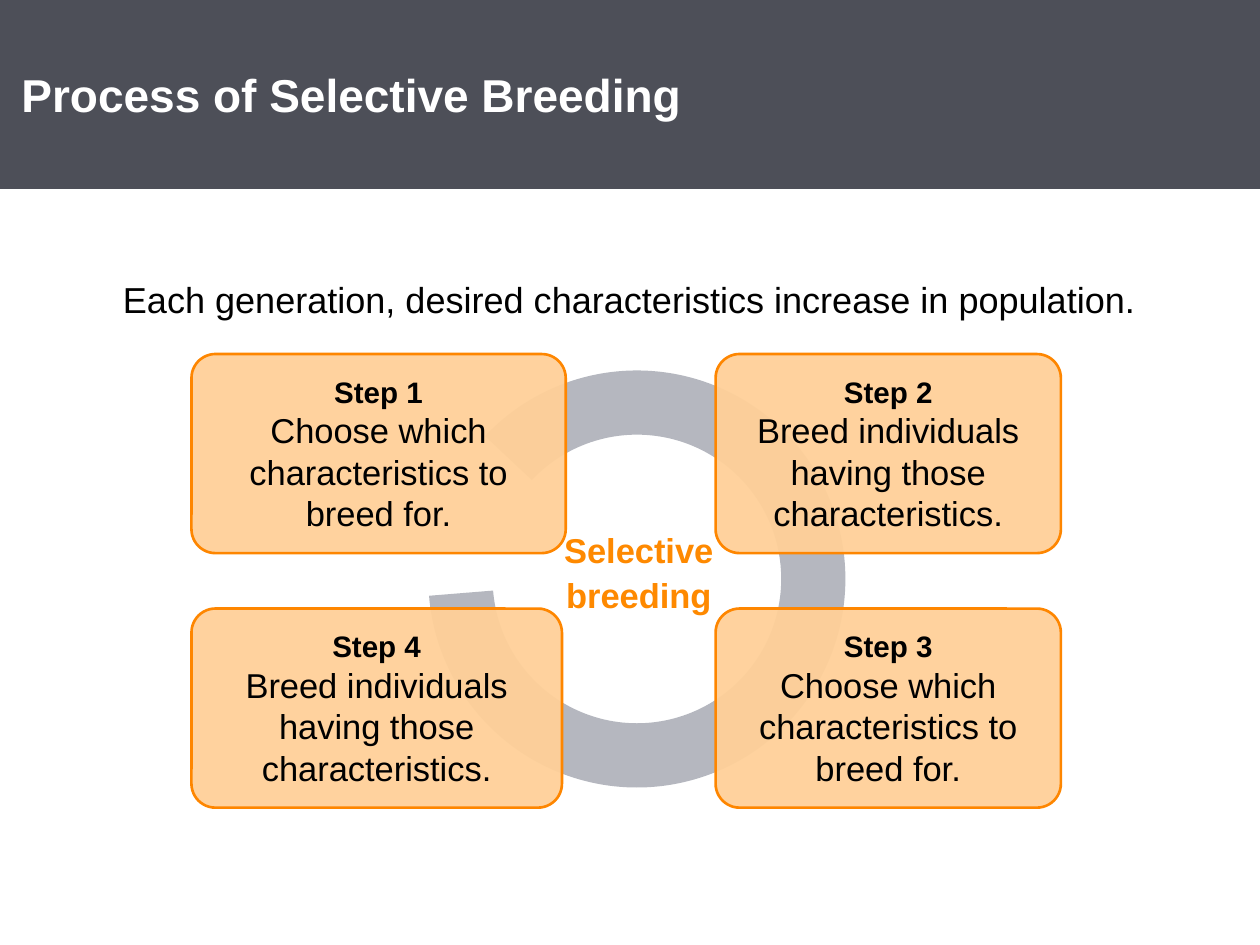
import pptx
import pptx.dml.color
import pptx.enum.shapes
import pptx.enum.text
import pptx.oxml
import pptx.oxml.ns
import pptx.util

Inches = pptx.util.Inches
Align = pptx.enum.text.PP_ALIGN
Anchor = pptx.enum.text.MSO_ANCHOR
Preset = pptx.enum.shapes.MSO_SHAPE

# Content
TITLE = "Process of Selective Breeding"
SUMMARY = "Each generation, desired characteristics increase in population."
CENTER_LINES = ["Selective", "breeding"]
CHOOSE = "Choose which characteristics to breed for."
BREED = "Breed individuals having those characteristics."
STEPS = [  # heading, text, column, row, width
    ("Step 1", CHOOSE, 0, 0, 2.97),
    ("Step 4", BREED, 0, 1, 2.94),
    ("Step 2", BREED, 1, 0, 2.74),
    ("Step 3", CHOOSE, 1, 1, 2.74),
]
COLUMN_LEFTS = [1.52, 5.68]
ROW_TOPS = [2.81, 4.83]
STEP_HEIGHT = 1.58

THEME = {
    "font": "Arial",
    "banner": "4D4F58", "white": "FFFFFF", "text": "000000",
    "ring": "B5B7BF", "step": "FFD099", "outline": "FE8600", "accent": "FE8900",
    "title_size": 26.3, "summary_size": 20.6, "heading_size": 16.9, "body_size": 19.7,
}


def color(name):
    return pptx.dml.color.RGBColor.from_string(THEME[name])


def box(left, top, width, height):
    return [Inches(value) for value in (left, top, width, height)]


def set_frame(frame, anchor, horizontal, vertical):
    frame.word_wrap = True
    frame.auto_size = pptx.enum.text.MSO_AUTO_SIZE.NONE
    frame.vertical_anchor = anchor
    frame.margin_left = frame.margin_right = Inches(horizontal)
    frame.margin_top = frame.margin_bottom = Inches(vertical)


def style(paragraph, size, color_name, bold=False, alignment=Align.CENTER):
    paragraph.alignment = alignment
    paragraph.font.name = THEME["font"]
    paragraph.font.size = pptx.util.Pt(THEME[size])
    paragraph.font.bold = bold
    paragraph.font.color.rgb = color(color_name)


def add_filled_shape(slide, preset, bounds, fill):
    shape = slide.shapes.add_shape(preset, *bounds)
    shape.shadow.inherit = False
    shape.fill.solid()
    shape.fill.fore_color.rgb = color(fill)
    shape.line.fill.background()
    return shape


def add_step(slide, heading, text, column, row, width):
    bounds = box(COLUMN_LEFTS[column], ROW_TOPS[row], width, STEP_HEIGHT)
    shape = add_filled_shape(slide, Preset.ROUNDED_RECTANGLE, bounds, "step")
    shape.adjustments[0] = 0.12
    shape.line.color.rgb = color("outline")
    shape.line.width = pptx.util.Pt(1.5)
    # Slight transparency lets the ring show through
    fill_color = shape.fill._xPr.find(".//" + pptx.oxml.ns.qn("a:srgbClr"))
    alpha = pptx.oxml.parse_xml(f'<a:alpha {pptx.oxml.ns.nsdecls("a")} val="95000"/>')
    fill_color.append(alpha)
    frame = shape.text_frame
    set_frame(frame, Anchor.MIDDLE, 0.19, 0.09)
    frame.text = f"{heading}\n{text}"
    style(frame.paragraphs[0], "heading_size", "text", bold=True)
    style(frame.paragraphs[1], "body_size", "text")


def main():
    presentation = pptx.Presentation()
    presentation.slide_width = Inches(10)
    presentation.slide_height = Inches(7.5)
    slide = presentation.slides.add_slide(presentation.slide_layouts[5])

    # Title banner
    title = slide.shapes.title
    title.left, title.top, title.width, title.height = box(0, 0, 10, 1.5)
    title.fill.solid()
    title.fill.fore_color.rgb = color("banner")
    set_frame(title.text_frame, Anchor.MIDDLE, 0.17, 0.07)
    title.text_frame.text = TITLE
    style(title.text_frame.paragraphs[0], "title_size", "white", True, Align.LEFT)

    # Summary line
    summary = slide.shapes.add_textbox(*box(0, 2.06, 10, 0.73)).text_frame
    set_frame(summary, Anchor.TOP, 0.18, 0.1)
    summary.text = SUMMARY
    style(summary.paragraphs[0], "summary_size", "text")
    summary.paragraphs[0].line_spacing = 1.13

    # Cycle ring: start angle, end angle, thickness
    ring = add_filled_shape(slide, Preset.BLOCK_ARC, box(3.4, 2.94, 3.31, 3.31), "ring")
    for index, value in enumerate((133.95, 105.23, 0.154)):
        ring.adjustments[index] = value

    # Steps around the ring
    for step in STEPS:
        add_step(slide, *step)

    # Label in the middle of the ring
    label = slide.shapes.add_textbox(*box(4.01, 4.15, 2.12, 0.79)).text_frame
    set_frame(label, Anchor.TOP, 0.1, 0.05)
    label.text = "\n".join(CENTER_LINES)
    for paragraph in label.paragraphs:
        style(paragraph, "body_size", "accent", bold=True)
        paragraph.space_before = pptx.util.Pt(1.9)

    presentation.save("out.pptx")


if __name__ == "__main__":
    main()
